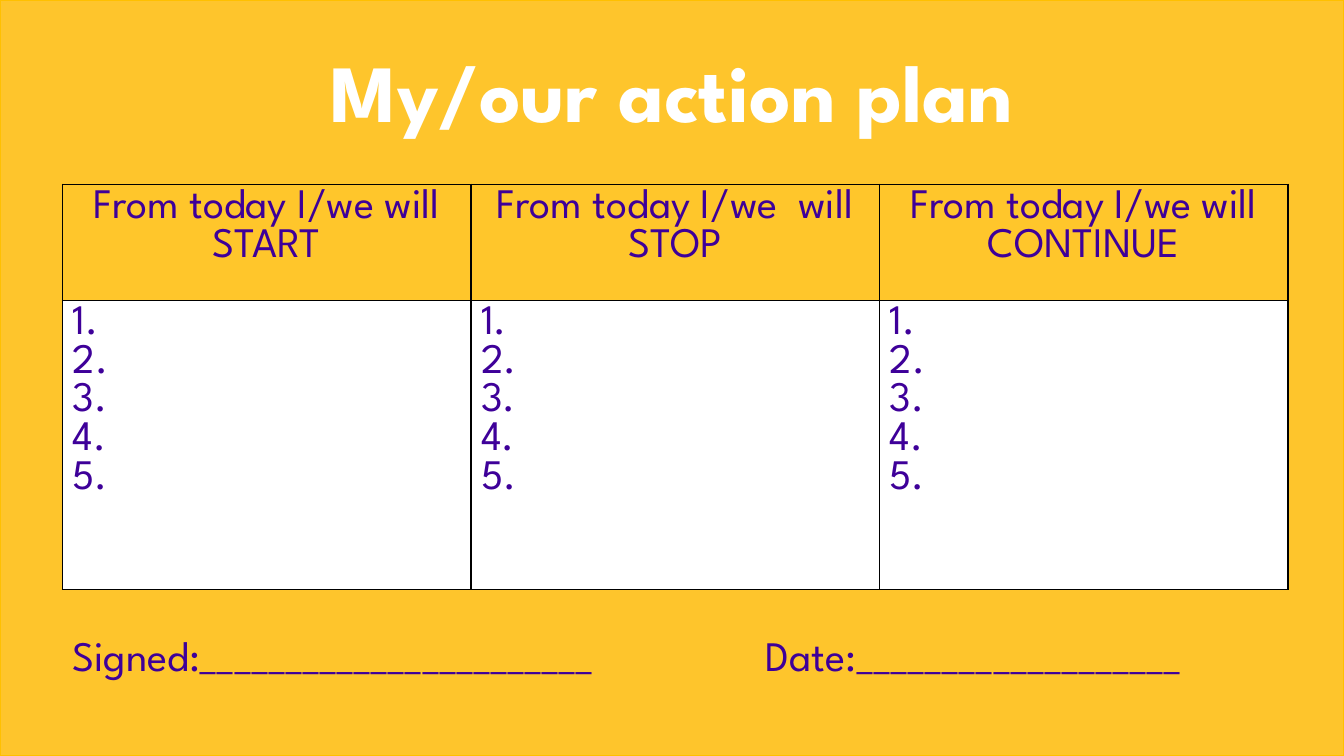
from lxml import etree
from pptx import Presentation
from pptx.dml.color import RGBColor
from pptx.enum import shapes, text
from pptx.oxml import ns
from pptx.util import Pt

FONT = "League Spartan"
PURPLE, WHITE, BLACK = "3E0099", "FFFFFF", "000000"
AMBER, AMBER_EDGE, HEADER_AMBER = "FEC52C", "FFC000", "FFC62B"
PAGE_WIDTH, PAGE_HEIGHT = 960, 540

TITLE = "My/our action plan"
HEADINGS = [
    "From today I/we will START",
    "From today I/we  will STOP",
    "From today I/we will CONTINUE",
]
ITEMS = ["1.", "2.", "3.", "4.", "5."]
SIGN_OFFS = [  # text, left, width
    ("Signed:" + "_" * 23, 44.6, 475.2),
    ("Date:" + "_" * 19, 540, 380),
]
TABLE_LEFT, TABLE_TOP = 44.6, 131.6
COLUMN_WIDTH, ROW_HEIGHTS = 291.8, (82.8, 206.9)

BODY = {"size": Pt(30), "bold": False}
HEADLINE = {"size": Pt(58), "bold": True}


def colour(value):
    return RGBColor.from_string(value)


def write(frame, lines, font_format, shade, align=text.PP_ALIGN.LEFT):
    """Put one paragraph per line into a text frame."""
    for index, line in enumerate(lines):
        para = frame.add_paragraph() if index else frame.paragraphs[0]
        para.alignment = align
        span = para.add_run()
        span.text = line
        span.font.name = FONT
        span.font.color.rgb = colour(shade)
        for name, value in font_format.items():
            setattr(span.font, name, value)


def add_text(page, place, line, font_format, shade, align, wrap):
    frame = page.shapes.add_textbox(*map(Pt, place)).text_frame
    frame.word_wrap = wrap
    frame.auto_size = text.MSO_AUTO_SIZE.SHAPE_TO_FIT_TEXT
    write(frame, [line], font_format, shade, align)


def add_borders(cell):
    properties = cell._tc.get_or_add_tcPr()
    for position, side in enumerate(("lnL", "lnR", "lnT", "lnB")):
        border = etree.Element(ns.qn("a:" + side), w=str(Pt(1)))
        fill = etree.SubElement(border, ns.qn("a:solidFill"))
        etree.SubElement(fill, ns.qn("a:srgbClr"), val=BLACK)
        properties.insert(position, border)


def fill_cell(cell, lines, background, align):
    cell.fill.solid()
    cell.fill.fore_color.rgb = colour(background)
    write(cell.text_frame, lines, BODY, PURPLE, align)
    add_borders(cell)


def add_plan(page):
    size = (COLUMN_WIDTH * len(HEADINGS), sum(ROW_HEIGHTS))
    plan = page.shapes.add_table(
        len(ROW_HEIGHTS), len(HEADINGS), *map(Pt, (TABLE_LEFT, TABLE_TOP, *size))
    ).table
    for row, height in zip(plan.rows, ROW_HEIGHTS):
        row.height = Pt(height)
    for index, heading in enumerate(HEADINGS):
        plan.columns[index].width = Pt(COLUMN_WIDTH)
        fill_cell(plan.cell(0, index), [heading], HEADER_AMBER, text.PP_ALIGN.CENTER)
        fill_cell(plan.cell(1, index), ITEMS, WHITE, text.PP_ALIGN.LEFT)


def main():
    deck = Presentation()
    deck.slide_width, deck.slide_height = Pt(PAGE_WIDTH), Pt(PAGE_HEIGHT)
    page = deck.slides.add_slide(deck.slide_layouts[6])

    backdrop = page.shapes.add_shape(
        shapes.MSO_SHAPE.RECTANGLE, 0, 0, Pt(PAGE_WIDTH), Pt(PAGE_HEIGHT)
    )
    backdrop.shadow.inherit = False
    backdrop.fill.solid()
    backdrop.fill.fore_color.rgb = colour(AMBER)
    backdrop.line.color.rgb = colour(AMBER_EDGE)
    backdrop.line.width = Pt(1)

    add_plan(page)
    for line, left, width in SIGN_OFFS:
        add_text(page, (left, 446.4, width, 43.9), line, BODY, PURPLE,
                 text.PP_ALIGN.LEFT, False)
    add_text(page, (0, 26, PAGE_WIDTH, 77.8), TITLE, HEADLINE, WHITE,
             text.PP_ALIGN.CENTER, True)
    deck.save("out.pptx")


if __name__ == "__main__":
    main()
